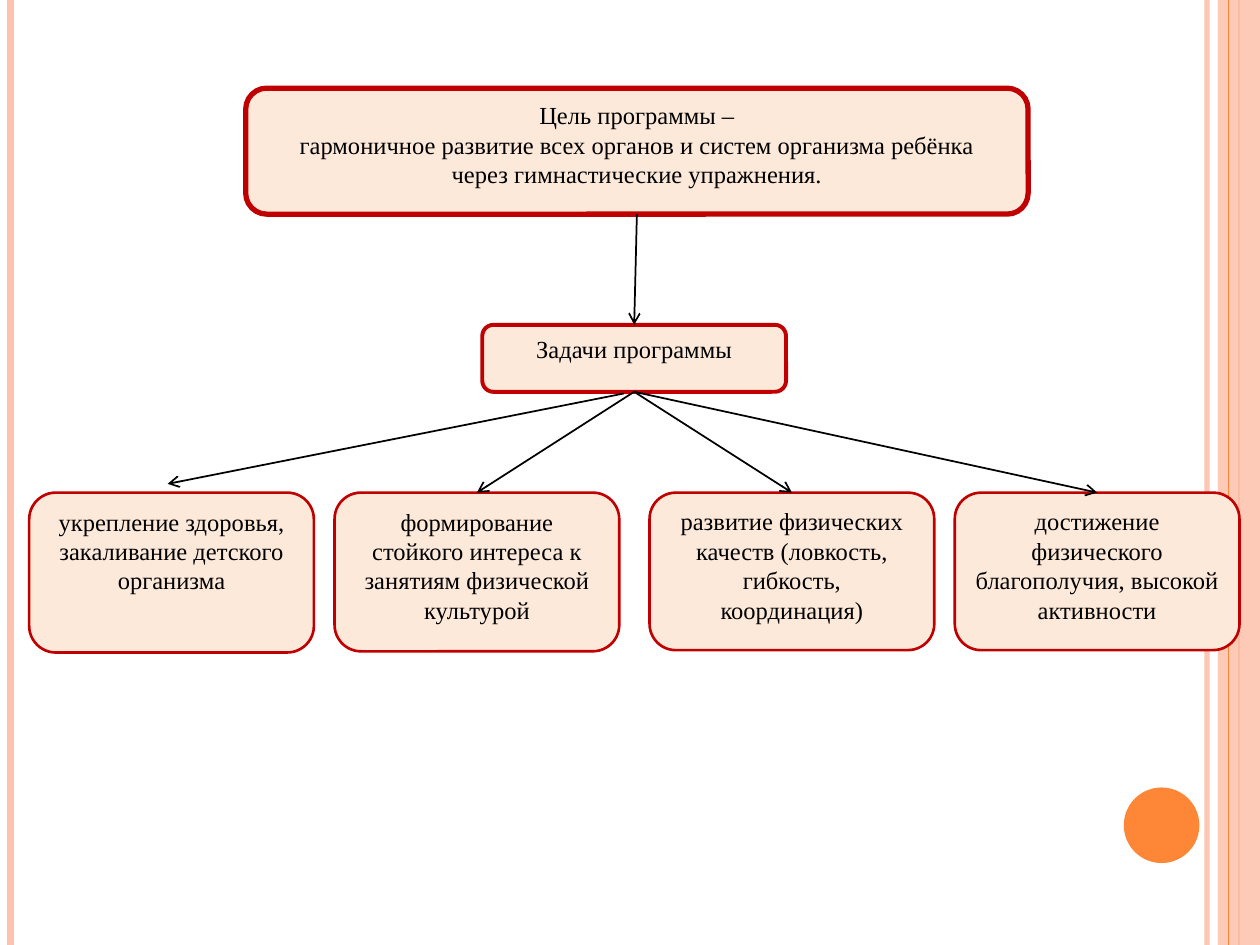
from dataclasses import dataclass

from lxml.etree import SubElement
from pptx import Presentation
from pptx.dml.color import RGBColor
from pptx.enum.shapes import MSO_CONNECTOR, MSO_SHAPE
from pptx.enum.text import MSO_ANCHOR, PP_ALIGN
from pptx.oxml.ns import qn
from pptx.shapes.autoshape import Shape
from pptx.slide import Slide
from pptx.util import Pt


@dataclass(frozen=True)
class Theme:
    font: str = "Times New Roman"
    text_size: float = 14
    text: str = "000000"
    card: str = "FDE9D9"
    border: str = "C00000"
    pale: str = "FEC3AE"
    accent: str = "FE8637"


@dataclass(frozen=True)
class Frame:
    left: float
    top: float
    width: float
    height: float

    @property
    def center(self) -> float:
        return self.left + self.width / 2

    @property
    def bottom(self) -> float:
        return self.top + self.height


@dataclass(frozen=True)
class Card:
    frame: Frame
    border_width: float
    paragraphs: tuple[str, ...]
    space_after: float = 10


@dataclass(frozen=True)
class Line:
    start: tuple[float, float]
    end: tuple[float, float]
    color: str
    width: float
    opacity: int = 100
    arrow: bool = False


THEME = Theme()
PAGE_WIDTH, PAGE_HEIGHT = 720, 540
TASK_TOP, TASK_WIDTH = 281.5, 162.7

GOAL = Card(
    Frame(140.4, 50.4, 447.1, 72),
    3,
    (
        "Цель программы –",
        "гармоничное развитие всех органов и систем организма ребёнка",
        "через гимнастические упражнения.",
    ),
    space_after=0,
)
HEADING = Card(Frame(275.6, 185.6, 173.6, 38.3), 2.25, ("Задачи программы",))
TASKS = [
    Card(Frame(left, TASK_TOP, TASK_WIDTH, height), 1.5, (text,))
    for left, height, text in (
        (16.7, 91.4, "укрепление здоровья, закаливание детского организма"),
        (191.2, 90.7, "формирование стойкого интереса к занятиям физической культурой"),
        (371.2, 90, "развитие физических качеств (ловкость, гибкость, координация)"),
        (545.6, 90, "достижение физического благополучия, высокой активности"),
    )
]


def rail(x: float, color: str, width: float, opacity: int = 100) -> Line:
    return Line((x, 0), (x, PAGE_HEIGHT), color, width, opacity)


def arrow(start: tuple[float, float], end: tuple[float, float]) -> Line:
    return Line(start, end, THEME.text, 1, arrow=True)


def set_opacity(fill: object, percent: int) -> None:
    color = fill._xPr.find(f"{qn('a:solidFill')}/{qn('a:srgbClr')}")
    SubElement(color, qn("a:alpha"), val=str(percent * 1000))


def draw_line(page: Slide, line: Line) -> None:
    points = [Pt(value) for value in (*line.start, *line.end)]
    connector = page.shapes.add_connector(MSO_CONNECTOR.STRAIGHT, *points)
    connector.line.width = Pt(line.width)
    connector.line.fill.solid()
    connector.line.fill.fore_color.rgb = RGBColor.from_string(line.color)
    if line.opacity < 100:
        set_opacity(connector.line.fill, line.opacity)
    if line.arrow:
        SubElement(connector.line._get_or_add_ln(), qn("a:tailEnd"), type="arrow")
    SubElement(connector._element.spPr, qn("a:effectLst"))


def draw_shape(page: Slide, kind: MSO_SHAPE, frame: Frame, color: str) -> Shape:
    shape = page.shapes.add_shape(
        kind, Pt(frame.left), Pt(frame.top), Pt(frame.width), Pt(frame.height)
    )
    shape.shadow.inherit = False
    shape.fill.solid()
    shape.fill.fore_color.rgb = RGBColor.from_string(color)
    shape.line.fill.background()
    return shape


def draw_card(page: Slide, card: Card) -> None:
    box = draw_shape(page, MSO_SHAPE.ROUNDED_RECTANGLE, card.frame, THEME.card)
    box.line.width = Pt(card.border_width)
    box.line.fill.solid()
    box.line.fill.fore_color.rgb = RGBColor.from_string(THEME.border)
    box.text_frame.word_wrap = True
    box.text_frame.vertical_anchor = MSO_ANCHOR.TOP
    for index, text in enumerate(card.paragraphs):
        para = box.text_frame.add_paragraph() if index else box.text_frame.paragraphs[0]
        para.alignment = PP_ALIGN.CENTER
        para.space_after = Pt(card.space_after)
        span = para.add_run()
        span.text = text
        span.font.name = THEME.font
        span.font.size = Pt(THEME.text_size)
        span.font.color.rgb = RGBColor.from_string(THEME.text)


def draw_background(page: Slide) -> None:
    draw_line(page, rail(689.8, THEME.pale, 3, 93))
    draw_line(page, rail(6, THEME.pale, 4.5))
    draw_line(page, rail(708, THEME.accent, 1.5))
    band = draw_shape(
        page, MSO_SHAPE.RECTANGLE, Frame(696, 0, 24, PAGE_HEIGHT), THEME.pale
    )
    set_opacity(band.fill, 87)
    draw_line(page, rail(702, THEME.accent, 0.75))
    draw_shape(page, MSO_SHAPE.OVAL, Frame(642.2, 450, 43.2, 43.2), THEME.accent)


def main() -> None:
    """Build the slide that leads from the programme goal to its four tasks."""
    deck = Presentation()
    deck.slide_width, deck.slide_height = Pt(PAGE_WIDTH), Pt(PAGE_HEIGHT)
    page = deck.slides.add_slide(deck.slide_layouts[6])
    draw_background(page)
    for card in (GOAL, HEADING, *TASKS):
        draw_card(page, card)

    hub = (HEADING.frame.center, HEADING.frame.bottom)
    draw_line(
        page,
        arrow(
            (GOAL.frame.center, GOAL.frame.bottom),
            (HEADING.frame.center, HEADING.frame.top),
        ),
    )
    draw_line(page, arrow((356.4, 224.9), (95.8, 276.5)))
    for task in TASKS[1:]:
        draw_line(page, arrow(hub, (task.frame.center, TASK_TOP)))
    deck.save("out.pptx")


if __name__ == "__main__":
    main()
